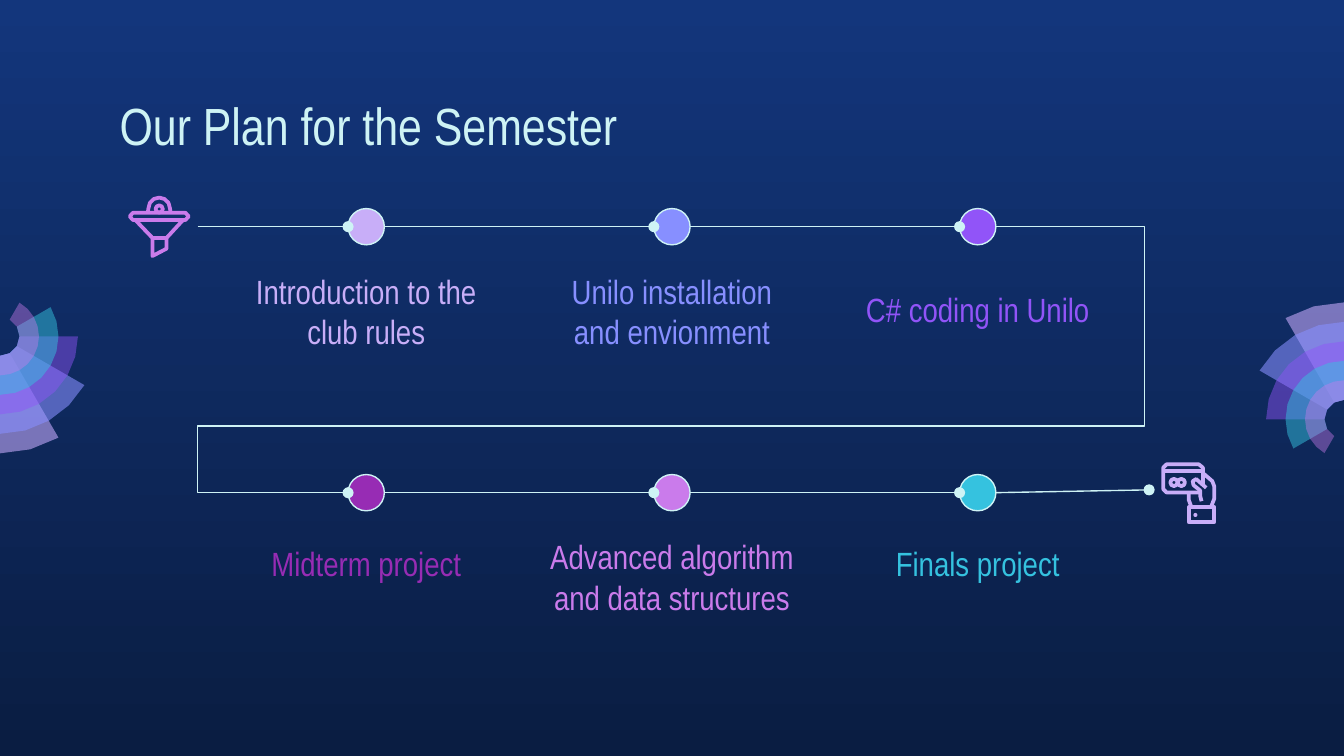
"""Build a semester plan slide with a winding six-stop timeline."""
from dataclasses import dataclass
from math import cos, radians, sin

from lxml import etree
from pptx import Presentation
from pptx.dml.color import RGBColor
from pptx.enum.shapes import MSO_CONNECTOR, MSO_SHAPE
from pptx.enum.text import MSO_ANCHOR, PP_ALIGN
from pptx.oxml.ns import qn
from pptx.util import Inches, Pt

OVAL = MSO_SHAPE.OVAL
LINE, ELBOW = MSO_CONNECTOR.STRAIGHT, MSO_CONNECTOR.ELBOW
TOP, BASE = MSO_ANCHOR.TOP, MSO_ANCHOR.BOTTOM
LEFT, MID = PP_ALIGN.LEFT, PP_ALIGN.CENTER

WIDE = Inches(10)
HIGH = WIDE * 9 // 16
CELL = WIDE // 100
FONT = "Arial Narrow"
INK = {
    "sky": "13367C", "night": "0A1D42", "ice": "CEF3F5",
    "lilac": "C8AEF8", "mist": "C8ACFD", "blue": "878FFF", "violet": "9154F8",
    "plum": "972CB4", "pink": "CA7BEB", "aqua": "35C2DF",
}
COLS = [27.25 + 22.75 * i for i in range(3)]
ROWS = [16.87, 36.66]
DOT = 2.7
RAD = DOT / 2
Spot = tuple[float, float]
Path = list[Spot]


@dataclass
class Stop:
    """A timeline stop, placed by column and row, with its label's drop."""
    text: str
    tint: str
    col: int
    row: int
    drop: float


@dataclass
class Blade:
    """A fan blade with its outer radius, end angle and opacity."""
    tint: str
    size: float
    stop: int
    alpha: int


STOPS = [
    Stop("Introduction to the club rules", "lilac", 0, 0, 5.05),
    Stop("Unilo installation and envionment", "blue", 1, 0, 5.05),
    Stop("C# coding in Unilo", "violet", 2, 0, 3.4),
    Stop("Midterm project", "plum", 0, 1, 2.5),
    Stop("Advanced algorithm and data structures", "pink", 1, 1, 5.05),
    Stop("Finals project", "aqua", 2, 1, 2.5),
]
BLADES = [
    Blade(tint, 1.45 * (6 - i), 120 + 30 * i, alpha)
    for i, (tint, alpha) in enumerate(
        [("mist", 58), ("blue", 58), ("violet", 46), ("aqua", 49), ("pink", 42)])
]


def cells(*vals: float) -> list[int]:
    """Turn grid cells into slide lengths."""
    return [round(v * CELL) for v in vals]


def tone(name: str) -> RGBColor:
    """Look up a colour."""
    return RGBColor.from_string(INK[name])


def style(item, **vals) -> None:
    """Set attributes from format values."""
    for key, val in vals.items():
        setattr(item, key, val)


def arc(x: float, y: float, size: float, start: int, end: int, step: int = 45) -> Path:
    """Return points along an arc."""
    step = step if end > start else -step
    turns = [radians(a) for a in range(start, end + step, step)]
    return [(x + size * cos(t), y - size * sin(t)) for t in turns]


def box(x: float, y: float, right: float, low: float) -> Path:
    """Return a closed rectangle."""
    return [(x, y), (right, y), (right, low), (x, low), (x, y)]


def trace(shapes, paths: list[Path]):
    """Draw one freeform from several paths."""
    pen = shapes.build_freeform(*cells(*paths[0][0]), scale=1.0)
    for i, path in enumerate(paths):
        if i:
            pen.move_to(*cells(*path[0]))
        pen.add_line_segments([cells(*p) for p in path[1:]], close=False)
    form = pen.convert_to_shape()
    form.shadow.inherit = False
    return form


def fan(shapes, x: float, y: float, turn: int) -> None:
    """Draw five see-through blades around a hub."""
    for b in BLADES:
        edge = arc(x, y, b.size, 90 + turn, b.stop + turn, 15)
        hub = arc(x, y, 1.45, b.stop + turn, 90 + turn, 30)
        form = trace(shapes, [edge + hub + edge[:1]])
        form.fill.solid()
        form.fill.fore_color.rgb = tone(b.tint)
        form.line.fill.background()
        ink = form._element.spPr.find(".//" + qn("a:srgbClr"))
        etree.SubElement(ink, qn("a:alpha"), val=str(b.alpha * 1000))


def icon(shapes, x: float, y: float, tint: str, paths: list[Path]) -> None:
    """Draw a line icon from paths in tenths of a cell."""
    form = trace(shapes, [[(x + a / 10, y + b / 10) for a, b in p] for p in paths])
    form.fill.background()
    form.line.color.rgb = tone(tint)
    form.line.width = Pt(2)


def ball(shapes, x: float, y: float, size: float, tint: str):
    """Draw a filled circle around a point."""
    disc = shapes.add_shape(OVAL, *cells(x - size / 2, y - size / 2, size, size))
    disc.shadow.inherit = False
    disc.fill.solid()
    disc.fill.fore_color.rgb = tone(tint)
    disc.line.fill.background()
    return disc


def write(frame, text: str, tint: str, size: int, side, anchor) -> None:
    """Fill and format a text frame."""
    pad = CELL
    style(frame, word_wrap=True, vertical_anchor=anchor, text=text,
          margin_left=pad, margin_right=pad, margin_top=pad, margin_bottom=pad)
    para = frame.paragraphs[0]
    para.alignment = side
    font = para.runs[0].font
    style(font, name=FONT, size=Pt(size))
    font.color.rgb = tone(tint)


def mark(shapes, s: Stop) -> None:
    """Draw a stop's label and dot."""
    x, y = COLS[s.col], ROWS[s.row]
    label = shapes.add_textbox(*cells(x - 10.4, y + s.drop, 20.8, 5.2))
    write(label.text_frame, s.text, s.tint, 18, MID, BASE)
    dot = ball(shapes, x, y, DOT, s.tint)
    dot.line.color.rgb = tone("ice")
    dot.line.width = Pt(0.75)


def link(shapes, start: Spot, end: Spot, tip: str = "tailEnd", kind=LINE):
    """Draw a connector with a round tip."""
    wire = shapes.add_connector(kind, *cells(*start, *end))
    wire.line.color.rgb = tone("ice")
    wire.line.width = Pt(0.75)
    props = wire._element.spPr
    etree.SubElement(props.find(qn("a:ln")), qn("a:" + tip), type="oval")
    etree.SubElement(props, qn("a:effectLst"))
    return wire


def bend(wire, *turns: int) -> None:
    """Give an elbow connector five segments."""
    geom = wire._element.spPr.find(qn("a:prstGeom"))
    geom.set("prst", "bentConnector5")
    guides = geom.find(qn("a:avLst"))
    for i, turn in enumerate(turns, 1):
        etree.SubElement(guides, qn("a:gd"), name=f"adj{i}", fmla=f"val {turn}")


def main() -> None:
    """Build and save the slide."""
    deck = Presentation()
    style(deck, slide_width=WIDE, slide_height=HIGH)
    slide = deck.slides.add_slide(deck.slide_layouts[5])
    shapes = slide.shapes
    back = slide.background.fill
    back.gradient()
    back.gradient_angle = 270
    for i, name in enumerate(("sky", "night")):
        style(back.gradient_stops[i], position=i)
        back.gradient_stops[i].color.rgb = tone(name)
    fan(shapes, 100, 31.2, 0)
    fan(shapes, 0, 25.03, 180)
    title = shapes.title
    style(title, **dict(zip(("left", "top", "width", "height"), cells(7.9, 5.9, 84.3, 6.3))))
    write(title.text_frame, "Our Plan for the Semester", "ice", 28, LEFT, TOP)
    for s in STOPS:
        mark(shapes, s)
    high, low = ROWS
    for a, b in zip(COLS, COLS[1:]):
        link(shapes, (a + RAD, high), (b - RAD, high))
        link(shapes, (b - RAD, low), (a + RAD, low), "headEnd")
    link(shapes, (14.7, high), (COLS[0] - RAD, high))
    link(shapes, (COLS[2] + RAD, low), (85.5, 36.45))
    wire = link(shapes, (COLS[2] + RAD, high), (COLS[0] - RAD, low), kind=ELBOW)
    bend(wire, -22900, 74900, 123200)
    icon(shapes, 9.5, 14.6, "pink", [
        [(4, 12.3), (1.5, 15), (4, 17.7), (43, 17.7), (45.5, 15), (43, 12.3), (4, 12.3)],
        [(6, 18), (18.5, 31), (18.5, 44.5), (29, 39), (29, 31), (41, 18)],
        [(18.5, 31), (29, 31)],
        [(15, 12)] + arc(23.5, 9, 8, 180, 0, 30) + [(32, 12)],
        arc(23.5, 9.5, 2.7, 0, 360),
    ])
    icon(shapes, 86.4, 34.4, "lilac", [arc(x, 15, 2.7, 0, 360) for x in (9.5, 15)])
    icon(shapes, 86.4, 34.4, "lilac", [
        [(30, 22.5), (4, 22.5), (1.5, 20), (1.5, 4), (4, 1.5), (28, 1.5),
         (31, 4), (31, 8), (38, 14), (39.5, 18), (39.5, 27), (37, 33.5)],
        [(1.5, 6.5), (31, 6.5), (31, 17)],
        [(33.5, 19), (26, 12.5), (23.5, 14), (24, 17), (29, 21), (29, 25), (30, 29)],
        [(20.5, 22.5), (20.5, 28), (22.5, 33.5)],
        box(20.5, 33.5, 39.5, 44.5),
    ])
    ball(shapes, 88.95, 38.32, 0.3, "lilac")
    deck.save("out.pptx")


if __name__ == "__main__":
    main()
